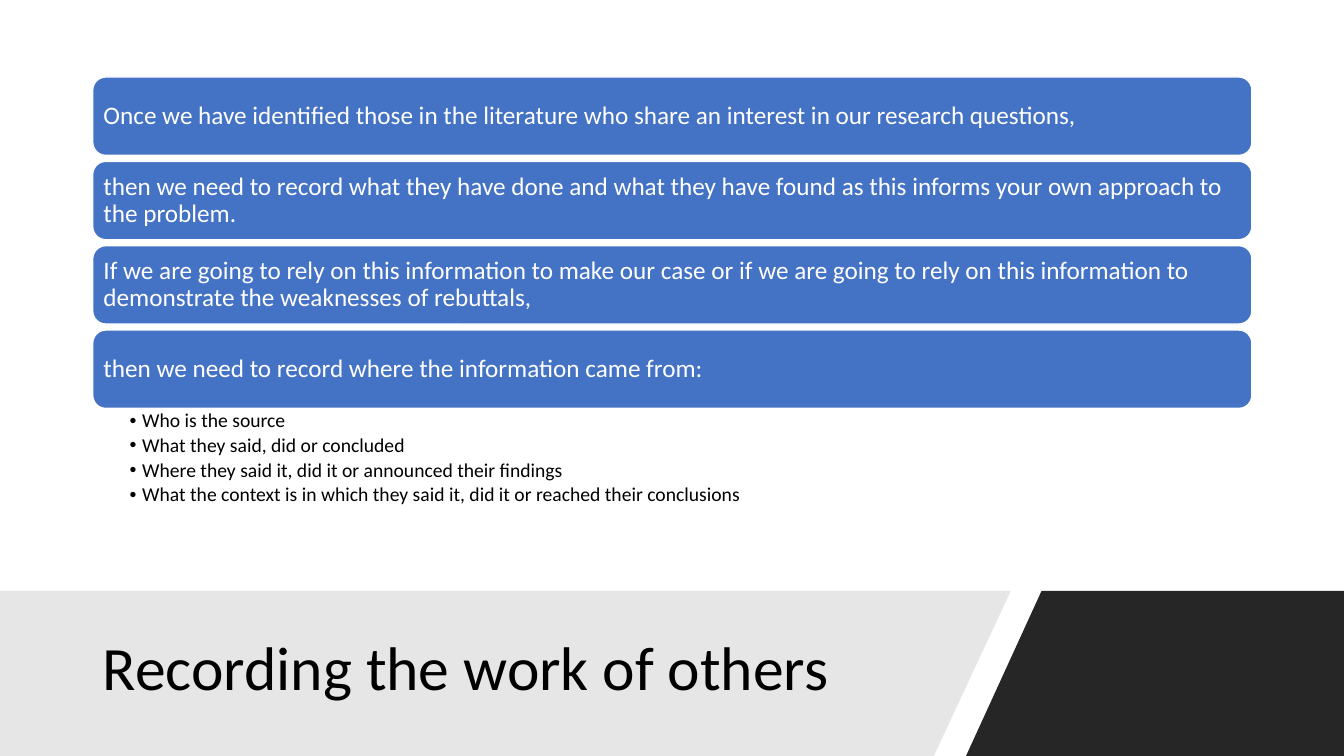
from dataclasses import dataclass

from lxml.etree import SubElement
from pptx import Presentation
from pptx.dml.color import RGBColor
from pptx.enum.shapes import MSO_SHAPE
from pptx.enum.text import MSO_ANCHOR, PP_ALIGN
from pptx.oxml.ns import qn
from pptx.util import Pt

FONT = "Calibri"
WHITE, BLACK, BLUE = "FFFFFF", "000000", "4472C4"
SLIDE_W, SLIDE_H = 960, 540
BAND_TOP = 422.5
LEFT, WIDTH = 66.25, 828
CARD_TOP, CARD_H, CARD_PITCH = 55, 56, 60.25


@dataclass
class Band:
    points: list[tuple[float, float]]
    color: str


@dataclass
class TextStyle:
    size: float
    color: str
    anchor: MSO_ANCHOR
    insets: tuple[float, float, float, float]
    space_after: float = 0
    bullet_indent: float = 0


BANDS = [
    Band([(744.25, BAND_TOP), (SLIDE_W, BAND_TOP), (SLIDE_W, SLIDE_H), (690, SLIDE_H)], "262626"),
    Band([(0, BAND_TOP), (721.5, BAND_TOP), (667, SLIDE_H), (0, SLIDE_H)], "E7E6E6"),
]
TITLE = "Recording the work of others"
STEPS = [
    "Once we have identified those in the literature who share an interest in our research questions,",
    "then we need to record what they have done and what they have found as this informs your own "
    "approach to the problem.",
    "If we are going to rely on this information to make our case or if we are going to rely on this "
    "information to demonstrate the weaknesses of rebuttals,",
    "then we need to record where the information came from:",
]
DETAILS = [
    "Who is the source",
    "What they said, did or concluded",
    "Where they said it, did it or announced their findings",
    "What the context is in which they said it, did it or reached their conclusions",
]
TITLE_STYLE = TextStyle(44, BLACK, MSO_ANCHOR.MIDDLE, (7.2, 3.6, 7.2, 3.6))
STEP_STYLE = TextStyle(18, WHITE, MSO_ANCHOR.MIDDLE, (5, 5, 5, 5))
DETAIL_STYLE = TextStyle(14, BLACK, MSO_ANCHOR.TOP, (26.3, 1.8, 10, 1.8), 2.5, 9)


def rgb(color: str) -> RGBColor:
    return RGBColor.from_string(color)


def paint(sp, fill: str) -> None:
    sp.shadow.inherit = False
    sp.fill.solid()
    sp.fill.fore_color.rgb = rgb(fill)
    sp.line.fill.background()


def add_bullet(p, indent: float) -> None:
    pPr = p._p.get_or_add_pPr()
    pPr.set("marL", str(Pt(indent)))
    pPr.set("indent", str(-Pt(indent)))
    SubElement(pPr, qn("a:buFont"), typeface="Arial")
    SubElement(pPr, qn("a:buChar"), char="•")


def write(sp, lines: list[str], style: TextStyle) -> None:
    tf = sp.text_frame
    tf.word_wrap = True
    tf.vertical_anchor = style.anchor
    tf.margin_left, tf.margin_top, tf.margin_right, tf.margin_bottom = map(Pt, style.insets)
    for i, line in enumerate(lines):
        p = tf.add_paragraph() if i else tf.paragraphs[0]
        p.alignment = PP_ALIGN.LEFT
        p.line_spacing = 0.9
        p.space_after = Pt(style.space_after)
        if style.bullet_indent:
            add_bullet(p, style.bullet_indent)
        r = p.add_run()
        r.text = line
        r.font.name = FONT
        r.font.size = Pt(style.size)
        r.font.color.rgb = rgb(style.color)


def add_band(s, band: Band) -> None:
    builder = s.shapes.build_freeform(*band.points[0], scale=Pt(1))
    builder.add_line_segments(band.points[1:], close=True)
    paint(builder.convert_to_shape(), band.color)


def add_text(s, box: tuple[float, float, float, float], lines: list[str], style: TextStyle) -> None:
    write(s.shapes.add_textbox(*map(Pt, box)), lines, style)


def add_step(s, top: float, text: str) -> None:
    sp = s.shapes.add_shape(MSO_SHAPE.ROUNDED_RECTANGLE, Pt(LEFT), Pt(top), Pt(WIDTH), Pt(CARD_H))
    paint(sp, BLUE)
    sp.line.color.rgb = rgb(WHITE)
    sp.line.width = Pt(1)
    write(sp, [text], STEP_STYLE)


def main() -> None:
    prs = Presentation()
    prs.slide_width, prs.slide_height = Pt(SLIDE_W), Pt(SLIDE_H)
    s = prs.slides.add_slide(prs.slide_layouts[6])
    for band in BANDS:
        add_band(s, band)
    add_text(s, (LEFT, 435.5, 607.5, 86.5), [TITLE], TITLE_STYLE)
    for i, step in enumerate(STEPS):
        add_step(s, CARD_TOP + i * CARD_PITCH, step)
    details_top = CARD_TOP + (len(STEPS) - 1) * CARD_PITCH + CARD_H
    add_text(s, (LEFT, details_top, WIDTH, 76.5), DETAILS, DETAIL_STYLE)
    prs.save("out.pptx")


if __name__ == "__main__":
    main()
